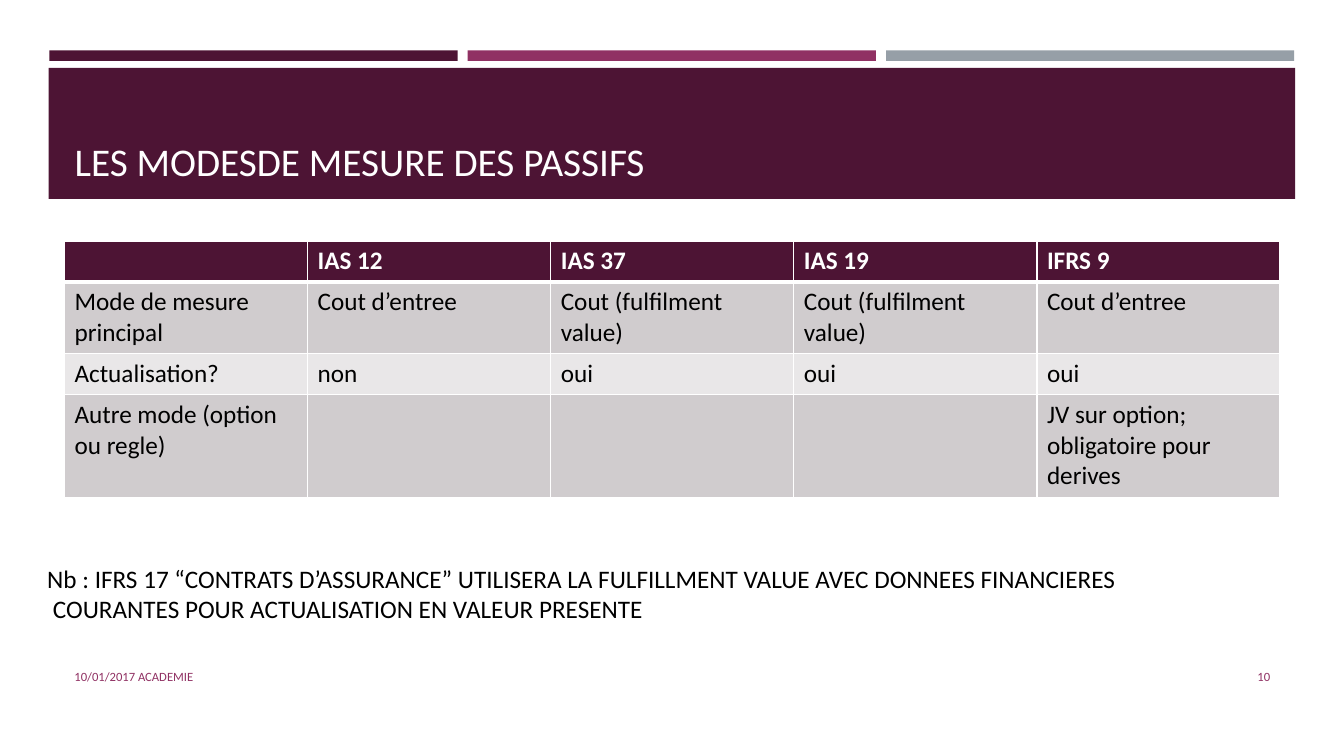
"""Build the slide on how liabilities are measured under each standard."""
from pptx import Presentation
from pptx import util as u
from pptx.dml.color import RGBColor
from pptx.enum import shapes, text
from pptx.oxml import parse_xml
from pptx.oxml.ns import nsdecls

TITLE = "LES MODESDE MESURE DES PASSIFS"
ROWS = [
    ["", "IAS 12", "IAS 37", "IAS 19", "IFRS 9"],
    ["Mode de mesure principal", "Cout d’entree", "Cout (fulfilment value)",
     "Cout (fulfilment value)", "Cout d’entree"],
    ["Actualisation?", "non", "oui", "oui", "oui"],
    ["Autre mode (option ou regle)", "", "", "",
     "JV sur option; obligatoire pour derives"],
]
NOTE = [
    "Nb : IFRS 17 “CONTRATS D’ASSURANCE” UTILISERA LA FULFILLMENT VALUE AVEC DONNEES FINANCIERES",
    " COURANTES POUR ACTUALISATION EN VALEUR PRESENTE",
]
DATE = "10/01/2017 ACADEMIE"
PAGE = "10"

HEX = {"plum": "4D1434", "rose": "903163", "slate": "969FA7", "white": "FFFFFF",
       "black": "000000", "dark": "D0CCCE", "pale": "E9E7E8"}
FONT = "Calibri"
LEFT, WIDE = 46.08, 868.32
HIGH = [29.2, 51, 29.2, 73.6]
BARS = ["plum", "rose", "slate"]
BAR_W, STEP = 291.6, 298.8


def color(name):
    return RGBColor.from_string(HEX[name])


def put(obj, form):
    for key, val in form.items():
        setattr(obj, key, val)


def write(frame, lines, size, tint, bold=False, align=text.PP_ALIGN.LEFT):
    for i, line in enumerate(lines):
        para = frame.paragraphs[0] if i == 0 else frame.add_paragraph()
        para.alignment = align
        run = para.add_run()
        run.text = line
        put(run.font, {"name": FONT, "size": u.Pt(size), "bold": bold})
        run.font.color.rgb = color(tint)


def block(slide, box, tint):
    shape = slide.shapes.add_shape(shapes.MSO_SHAPE.RECTANGLE, *map(u.Pt, box))
    shape.shadow.inherit = False
    shape.fill.solid()
    shape.fill.fore_color.rgb = color(tint)
    shape.line.fill.background()


def label(slide, box, lines, size, tint, anchor, align=text.PP_ALIGN.LEFT):
    frame = slide.shapes.add_textbox(*map(u.Pt, box)).text_frame
    put(frame, {"word_wrap": True, "vertical_anchor": anchor})
    write(frame, lines, size, tint, align=align)


def edge(cell, side, width):
    line = parse_xml(
        f'<a:{side} {nsdecls("a")} w="{u.Pt(width)}"><a:solidFill>'
        f'<a:srgbClr val="{HEX["white"]}"/></a:solidFill></a:{side}>')
    cell._tc.get_or_add_tcPr().append(line)


def grid(slide):
    count = len(ROWS[0])
    box = (LEFT, 172.08, WIDE, sum(HIGH))
    table = slide.shapes.add_table(len(ROWS), count, *map(u.Pt, box)).table
    for col in table.columns:
        col.width = u.Pt(WIDE / count)
    for r, row in enumerate(ROWS):
        table.rows[r].height = u.Pt(HIGH[r])
        head = r == 0
        for c, word in enumerate(row):
            cell = table.cell(r, c)
            for side in ("lnL", "lnR", "lnT", "lnB"):
                thick = (head and side == "lnB") or (r == 1 and side == "lnT")
                edge(cell, side, 3 if thick else 1)
            cell.fill.solid()
            cell.fill.fore_color.rgb = color(
                "plum" if head else "dark" if r % 2 else "pale")
            if word:
                write(cell.text_frame, [word], 18,
                      "white" if head else "black", head)


def main():
    deck = Presentation()
    put(deck, {"slide_width": u.Pt(960), "slide_height": u.Pt(540)})
    slide = deck.slides.add_slide(deck.slide_layouts[5])
    for i, tint in enumerate(BARS):
        block(slide, (35.28 + i * STEP, 36, BAR_W, 7.5), tint)
    block(slide, (34.8, 48.5, 890.4, 93.6), "plum")

    title = slide.shapes.title
    put(title, {"left": u.Pt(LEFT), "top": u.Pt(55.44),
                "width": u.Pt(WIDE), "height": u.Pt(79.92)})
    put(title.text_frame, {"word_wrap": True,
                           "auto_size": text.MSO_AUTO_SIZE.NONE,
                           "vertical_anchor": text.MSO_ANCHOR.BOTTOM})
    write(title.text_frame, [TITLE], 28, "white")
    slide.shapes._spTree.append(title._element)

    grid(slide)
    mid = text.MSO_ANCHOR.MIDDLE
    label(slide, (LEFT, 468.72, 544.32, 28.8), [DATE], 9, "rose", mid)
    label(slide, (831.6, 468.72, 82.8, 28.8), [PAGE], 9, "rose", mid,
          text.PP_ALIGN.RIGHT)
    label(slide, (26.64, 398.88, 906.48, 51.84), NOTE, 18, "black",
          text.MSO_ANCHOR.TOP)
    deck.save("out.pptx")


if __name__ == "__main__":
    main()
